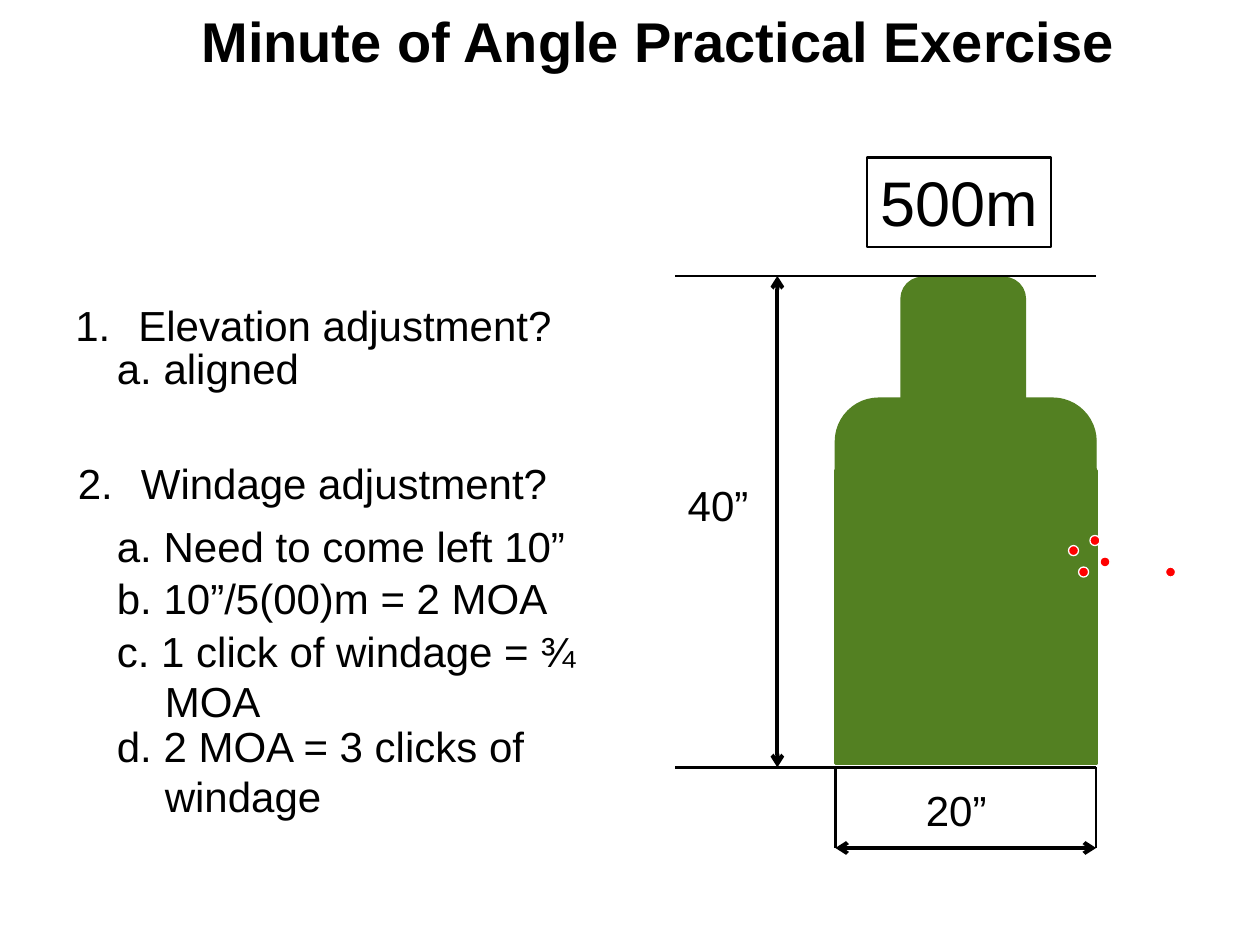
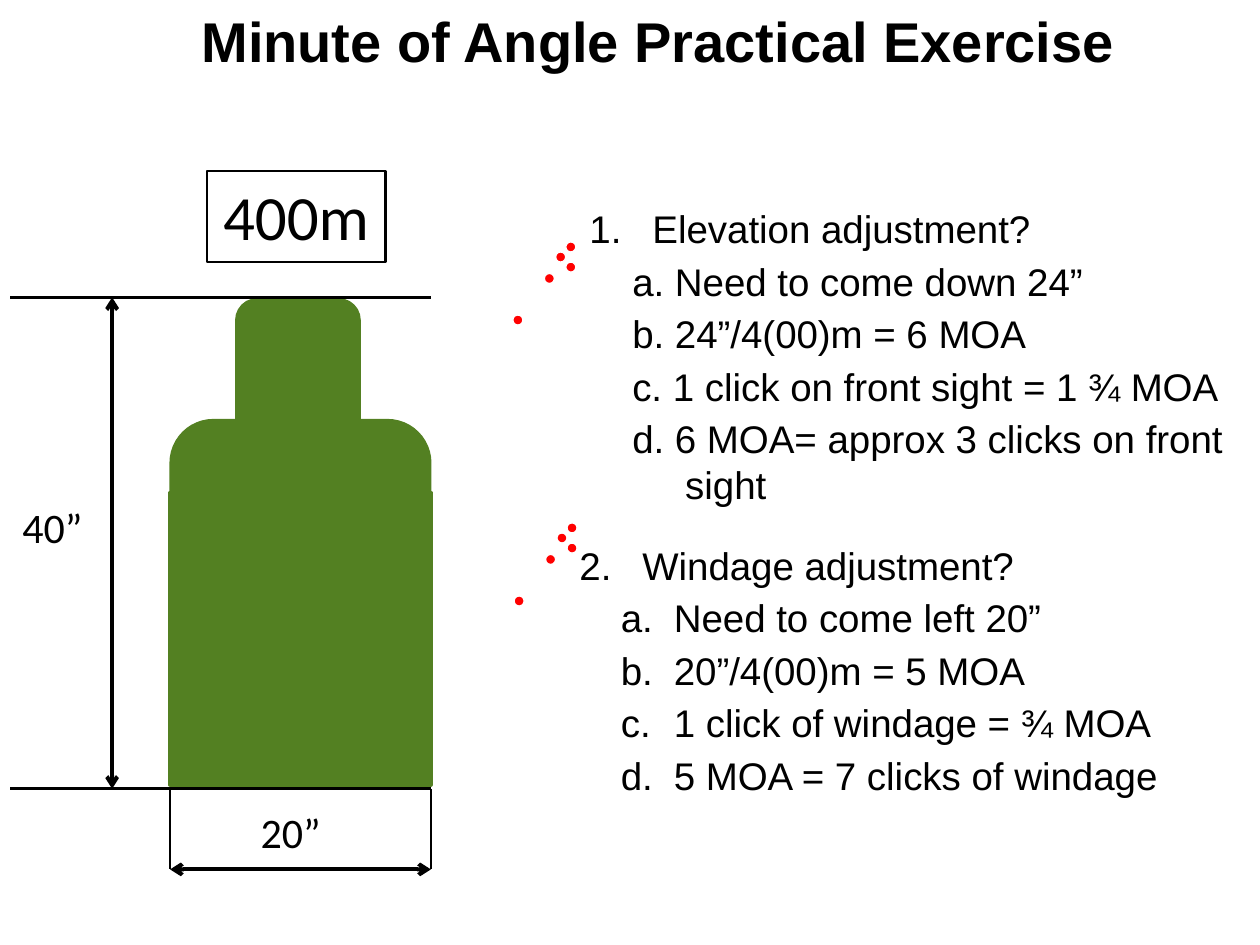
"""Build two minute-of-angle exercise slides, each with a target and worked answers."""
from dataclasses import dataclass

from lxml import etree
from pptx import Presentation
from pptx.dml.color import RGBColor
from pptx.enum.shapes import MSO_CONNECTOR, MSO_SHAPE
from pptx.enum.text import PP_ALIGN
from pptx.oxml.ns import qn
from pptx.util import Inches, Pt

STRAIGHT = MSO_CONNECTOR.STRAIGHT
RECT, ROUND, OVAL = MSO_SHAPE.RECTANGLE, MSO_SHAPE.ROUNDED_RECTANGLE, MSO_SHAPE.OVAL
LEFT, CENTER = PP_ALIGN.LEFT, PP_ALIGN.CENTER


@dataclass(frozen=True)
class Theme:
    ink: str = "000000"
    green: str = "538022"
    red: str = "FF0000"
    white: str = "FFFFFF"
    font: str = "Arial"
    title: int = 32
    distance: int = 36
    label: int = 24
    thin: float = 1.5
    thick: float = 2.25


T = Theme()
TITLE = "Minute of Angle Practical Exercise"
STEP = 5 / 12
WRAPPED_LINE = 0.34
SHOT_SIZE = 0.08
TRAILING_SHOTS = [(0.42, 0), (0, 0.58), (0.25, 0.25), (0.42, 0.16), (0.34, 0.08)]

SLIDES = [
    dict(
        target=(5.36, 2.19), target_font="Arial",
        distance="500m", frame=(6.88, 1.25, 1.46, 0.71),
        shot_groups=[(8.48, 4.25, [(0.77, 0.25), (0.08, 0.25), (0, 0.08),
                                   (0.17, 0), (0.25, 0.17)])],
        size=24, width=4.47,
        lists=[
            dict(heading="Elevation adjustment?", at=(0.5, 2.33), item_left=0.83,
                 gap=0.34, hang=0.38, items=[("a. aligned", 1)]),
            dict(heading="Windage adjustment?", at=(0.52, 3.58), item_left=0.83,
                 gap=0.5, hang=0.38,
                 items=[("a. Need to come left 10”", 1),
                        ("b. 10”/5(00)m = 2 MOA", 1),
                        ("c. 1 click of windage = ¾ MOA", 2),
                        ("d. 2 MOA = 3 clicks of windage", 2)]),
        ],
    ),
    dict(
        target=(0.08, 2.36), target_font="Calibri",
        distance="400m", frame=(1.64, 1.36, 1.42, 0.72),
        shot_groups=[(4.07, 1.92, TRAILING_SHOTS), (4.08, 4.15, TRAILING_SHOTS)],
        size=22, width=5.03,
        lists=[
            dict(heading="Elevation adjustment?", at=(4.58, 1.58), item_left=4.92,
                 gap=STEP, hang=0.42,
                 items=[("a. Need to come down 24”", 1),
                        ("b. 24”/4(00)m = 6 MOA", 1),
                        ("c. 1 click on front sight = 1 ¾ MOA", 1),
                        ("d. 6 MOA= approx 3 clicks on front\vsight", 2)]),
            dict(heading="Windage adjustment?", at=(4.5, 4.25), item_left=4.83,
                 gap=STEP, hang=0.42,
                 items=[("a.\tNeed to come left 20”", 1),
                        ("b.\t20”/4(00)m = 5 MOA", 1),
                        ("c.\t1 click of windage = ¾ MOA", 1),
                        ("d.\t5 MOA = 7 clicks of windage", 1)]),
        ],
    ),
]


def rgb(color):
    return RGBColor.from_string(color)


def add_text(shapes, text, box, size=T.label, font=T.font, bold=False, align=LEFT,
             wrap=False, hang=0, number=None, outline=None):
    sp = shapes.add_textbox(*map(Inches, box))
    if outline:
        sp.line.color.rgb = rgb(T.ink)
        sp.line.width = Pt(outline)
    tf = sp.text_frame
    tf.word_wrap = wrap
    p = tf.paragraphs[0]
    p.text = text
    p.alignment = align
    if hang:
        pPr = p._p.get_or_add_pPr()
        pPr.set("marL", str(Inches(hang)))
        pPr.set("indent", str(-Inches(hang)))
        if number:
            etree.SubElement(pPr, qn("a:buAutoNum"), type="arabicPeriod",
                             startAt=str(number))
    for r in p.runs:
        r.font.name = font
        r.font.size = Pt(size)
        r.font.bold = bold
        r.font.color.rgb = rgb(T.ink)


def add_filled(shapes, kind, box, fill, line, width):
    sp = shapes.add_shape(kind, *map(Inches, box))
    sp.shadow.inherit = False
    sp.fill.solid()
    sp.fill.fore_color.rgb = rgb(fill)
    sp.line.color.rgb = rgb(line)
    sp.line.width = Pt(width)


def add_line(shapes, start, end, arrows=False):
    cn = shapes.add_connector(STRAIGHT, *map(Inches, (*start, *end)))
    cn.line.color.rgb = rgb(T.ink)
    cn.line.width = Pt(T.thick if arrows else T.thin)
    if arrows:
        ln = cn.line._get_or_add_ln()
        for end_tag in ("a:headEnd", "a:tailEnd"):
            etree.SubElement(ln, qn(end_tag), type="arrow")
    etree.SubElement(cn._element.spPr, qn("a:effectLst"))


def add_target(slide, left, top, font):
    shapes = slide.shapes.add_group_shape().shapes
    body_left, right = left + 1.27, left + 3.34
    bottom, width_y, height_x = top + 3.9, top + 4.54, left + 0.81
    parts = [(ROUND, (body_left, top + 0.97, 2.07, 2.9), 0.75),
             (ROUND, (left + 1.8, top + 0.02, 0.97, 1.25), 2),
             (RECT, (body_left, top + 1.55, 2.07, 2.32), 2)]
    for kind, box, width in parts:
        add_filled(shapes, kind, box, T.green, T.green, width)
    for y in (top, bottom):
        add_line(shapes, (right, y), (left, y))
    for x in (body_left, right):
        add_line(shapes, (x, bottom), (x, width_y))
    add_line(shapes, (height_x, top), (height_x, bottom), arrows=True)
    add_line(shapes, (right, width_y), (body_left, width_y), arrows=True)
    add_text(shapes, "40”", (left, top + 1.57, 0.69, 0.5), font=font)
    add_text(shapes, "20”", (left + 1.89, top + 3.99, 0.69, 0.5), font=font)


def add_shots(slide, left, top, offsets):
    shapes = slide.shapes.add_group_shape().shapes
    for dx, dy in offsets:
        box = (left + dx, top + dy, SHOT_SIZE, SHOT_SIZE)
        add_filled(shapes, OVAL, box, T.red, T.white, 0.75)


def add_answers(slide, number, answers, size, width):
    left, top = answers["at"]
    add_text(slide.shapes, answers["heading"], (left, top, width, 0.5), size=size,
             wrap=True, hang=0.5, number=number)
    y = top + answers["gap"]
    for text, lines in answers["items"]:
        height = 0.5 + 0.4 * (lines - 1)
        add_text(slide.shapes, text, (answers["item_left"], y, width, height),
                 size=size, wrap=True, hang=answers["hang"])
        y += STEP + WRAPPED_LINE * (lines - 1)


def build_slide(prs, data):
    s = prs.slides.add_slide(prs.slide_layouts[6])
    add_target(s, *data["target"], data["target_font"])
    add_text(s.shapes, data["distance"], data["frame"], size=T.distance,
             font=data["target_font"], align=CENTER, outline=1.25)
    for number, answers in enumerate(data["lists"], 1):
        add_answers(s, number, answers, data["size"], data["width"])
    for group in data["shot_groups"]:
        add_shots(s, *group)
    add_text(s.shapes, TITLE, (1.5, 0, 7.51, 0.64), size=T.title, bold=True)


def main():
    prs = Presentation()
    prs.slide_width, prs.slide_height = Inches(10), Inches(7.5)
    for data in SLIDES:
        build_slide(prs, data)
    prs.save("out.pptx")


if __name__ == "__main__":
    main()
